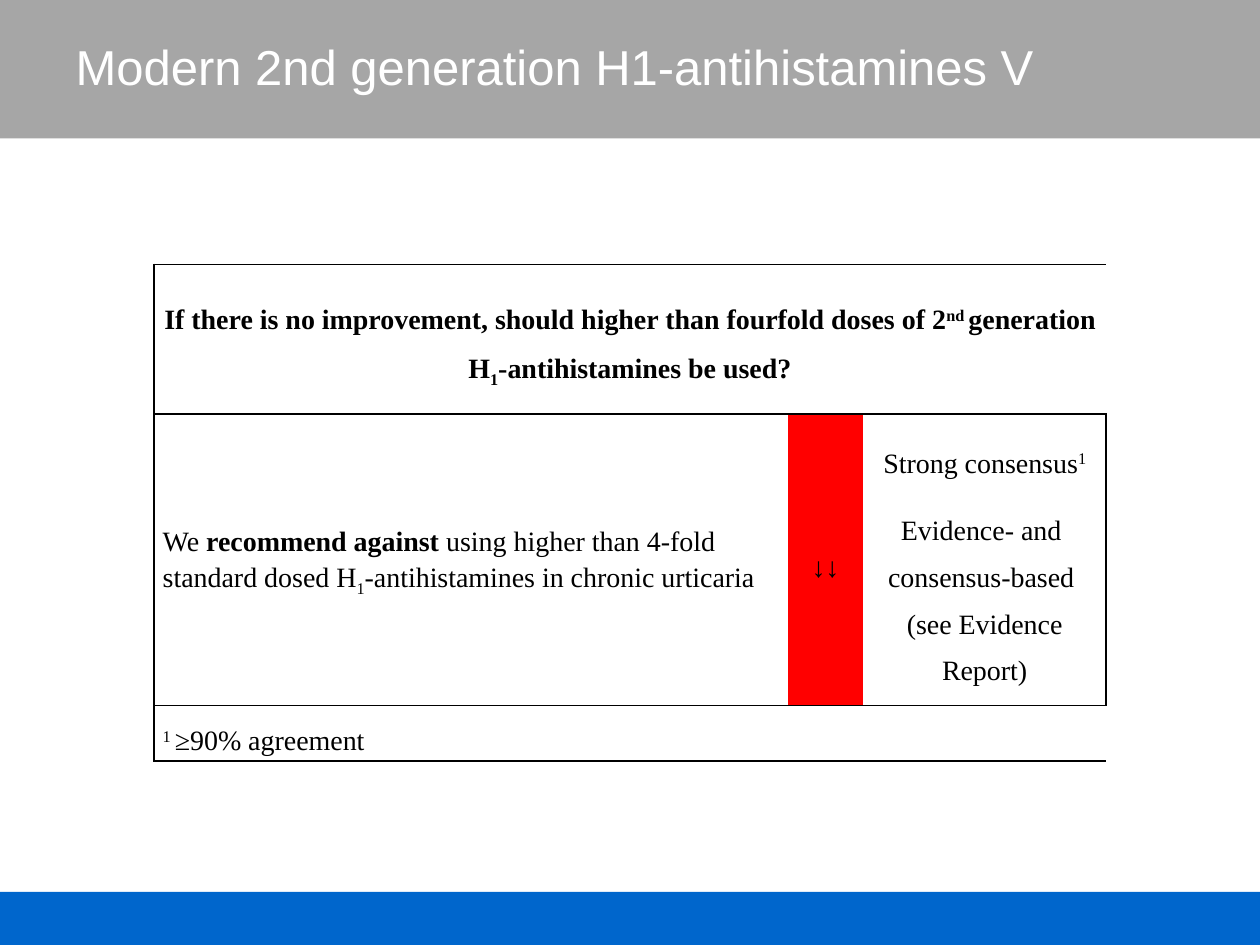
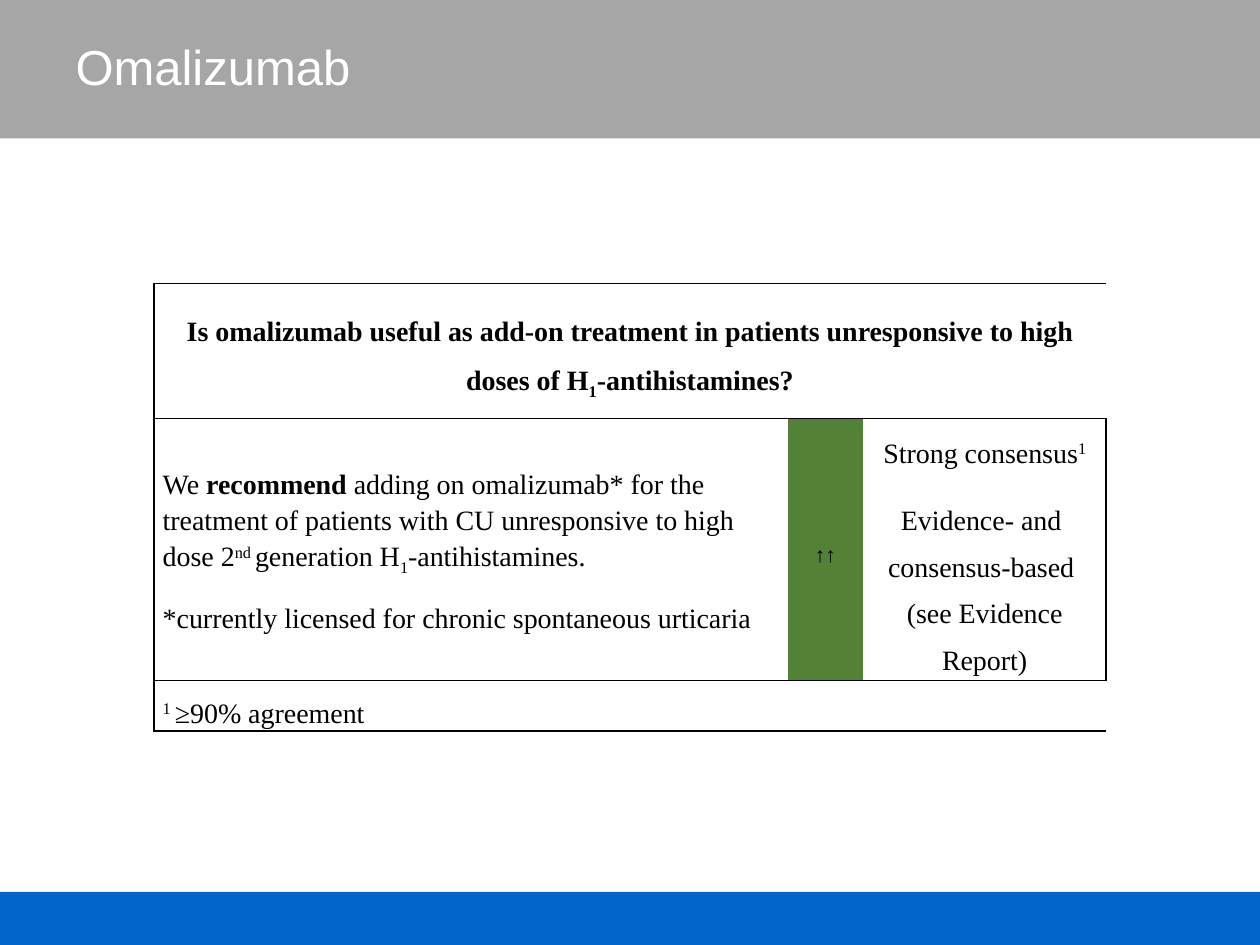
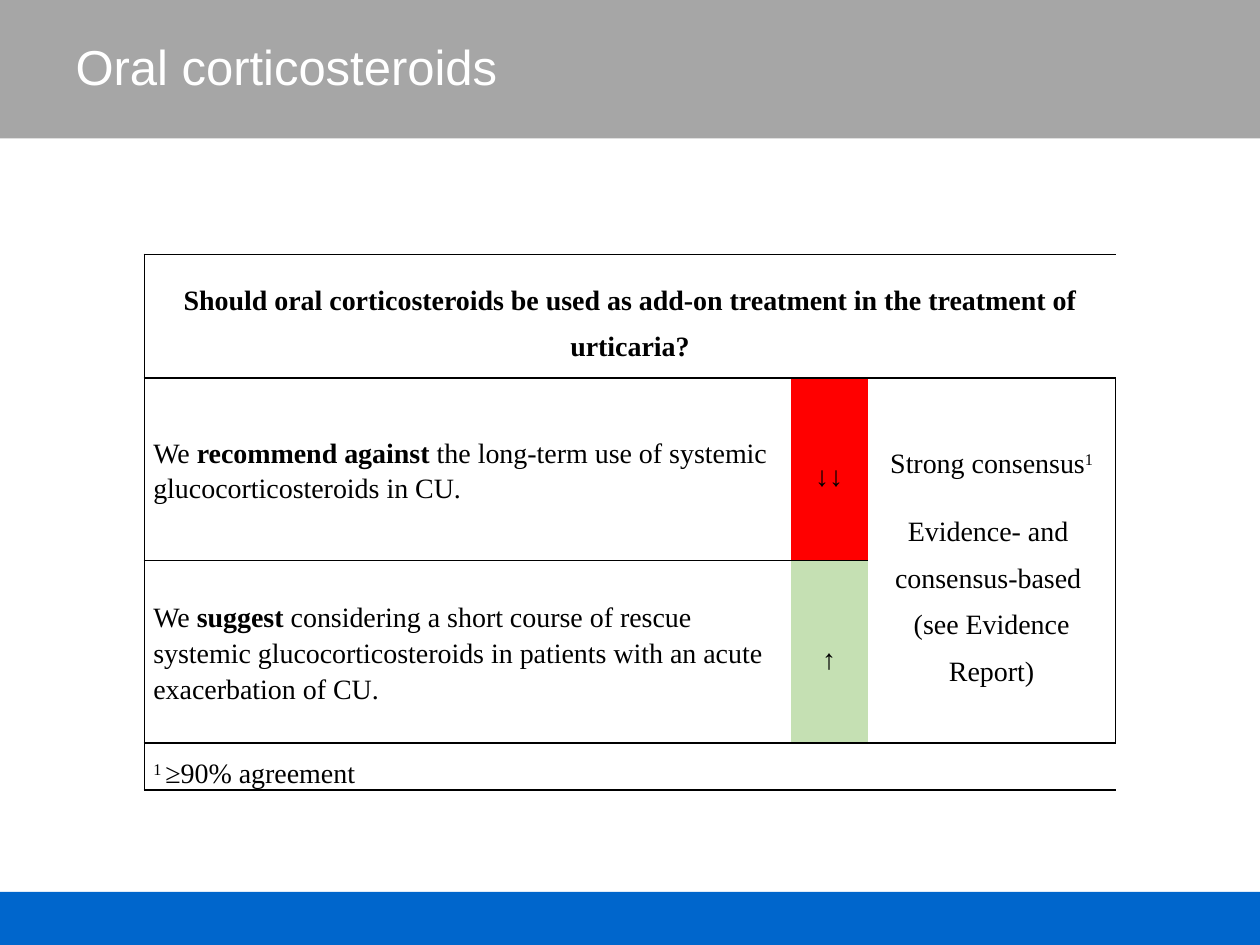
from lxml import etree
from pptx import Presentation
from pptx.dml.color import RGBColor
from pptx.enum import shapes, text
from pptx.oxml import ns
from pptx.util import Cm, Pt

GREY = RGBColor(0xA6, 0xA6, 0xA6)
BLUE = RGBColor(0x00, 0x66, 0xCC)
WHITE = RGBColor(0xFF, 0xFF, 0xFF)
BLACK = RGBColor(0x00, 0x00, 0x00)
RED = RGBColor(0xFF, 0x00, 0x00)
GREEN = RGBColor(0x53, 0x81, 0x35)
PALE = RGBColor(0xC5, 0xE0, 0xB3)

LEFT, MID, JUST = text.PP_ALIGN.LEFT, text.PP_ALIGN.CENTER, text.PP_ALIGN.JUSTIFY
WIDE, HIGH = 25.4, 19.05
BANDS = [(0, 2.79, GREY), (17.98, 1.07, BLUE)]
MARKS = {"!": ("b", "1"), "^": ("baseline", "30000"), "_": ("baseline", "-25000")}
NOTE = "^1 |≥90% agreement"
BASIS = [
    ("Strong consensus|^1", 6, 6),
    ("Evidence- and ", 6, 0),
    ("consensus-based ", 0, 0),
]
SOURCE = "(see Evidence Report)"

SLIDES = [
    {
        "title": "Modern 2nd generation H1-antihistamines V",
        "top": 5.33, "cols": [12.78, 1.52, 4.9], "rows": [3.02, 5.87, 1.12],
        "ask": "If there is no improvement, should higher than fourfold doses of 2"
               "|^nd |generation H|_1|-antihistamines be used?",
        "advice": [
            (["We |!recommend against| using higher than 4-fold standard dosed H"
              "|_1|-antihistamines in chronic urticaria"], "↓↓", 16, RED),
        ],
        "after": 0,
    },
    {
        "title": "Omalizumab",
        "top": 5.72, "cols": [12.78, 1.52, 4.9], "rows": [2.72, 5.28, 1.02],
        "ask": "Is omalizumab useful as add-on treatment in patients unresponsive "
               "to high doses of H|_1|-antihistamines?",
        "advice": [
            (["We |!recommend| adding on omalizumab* for the treatment of patients "
              "with CU unresponsive to high dose 2|^nd |generation H|_1|-antihistamines.",
              "*currently licensed for chronic spontaneous urticaria"], "↑↑", 12, GREEN),
        ],
        "after": 6,
    },
    {
        "title": "Oral corticosteroids",
        "top": 5.13, "cols": [13.03, 1.55, 5.0], "rows": [2.49, 3.68, 3.68, 0.94],
        "ask": "Should oral corticosteroids be used as add-on treatment in the "
               "treatment of urticaria?",
        "advice": [
            (["We |!recommend against |the long-term use of systemic "
              "glucocorticosteroids in CU."], "↓↓", 16, RED),
            (["We |!suggest| considering a short course of rescue systemic "
              "glucocorticosteroids in patients with an acute exacerbation of CU."],
             "↑", 16, PALE),
        ],
        "after": 6,
    },
]


def write(para, line, face="Times New Roman", size=16, ink=BLACK, bold=False):
    for piece in line.split("|"):
        mark = MARKS.get(piece[0])
        run = para.add_run()
        run.text = piece[1:] if mark else piece
        font = run.font
        font.name, font.size, font.bold = face, Pt(size), bold
        font.color.rgb = ink
        if mark:
            run._r.get_or_add_rPr().set(*mark)


def fill(cell, lines, align, pitch, size=16, bold=False):
    frame = cell.text_frame
    for i, (line, before, after) in enumerate(lines):
        para = frame.add_paragraph() if i else frame.paragraphs[0]
        para.alignment, para.line_spacing = align, pitch
        para.space_before, para.space_after = Pt(before), Pt(after)
        write(para, line, size=size, bold=bold)


def edge(cell, sides):
    props = cell._tc.get_or_add_tcPr()
    for side in "LRTB":
        line = etree.SubElement(props, ns.qn("a:ln" + side), w=str(Pt(1)))
        if side in sides:
            paint = etree.SubElement(line, ns.qn("a:solidFill"))
            etree.SubElement(paint, ns.qn("a:srgbClr"), val=str(BLACK))
        else:
            etree.SubElement(line, ns.qn("a:noFill"))


def frame_cells(table, count):
    for r in range(count):
        for c in range(3):
            cell = table.cell(r, c)
            cell.vertical_anchor = text.MSO_ANCHOR.MIDDLE
            cell.margin_left = cell.margin_right = Cm(0.18)
            cell.margin_top = cell.margin_bottom = 0
            inner = cell.is_spanned and 0 < r < count - 1
            sides = "B" if inner else "TB"
            edge(cell, sides + {0: "L", 2: "R"}.get(c, ""))
            cell.fill.background()


def add_advice(slide, data):
    cols, rows = data["cols"], data["rows"]
    last = len(rows) - 1
    table = slide.shapes.add_table(
        len(rows), 3, Cm((WIDE - sum(cols)) / 2), Cm(data["top"]),
        Cm(sum(cols)), Cm(sum(rows))).table
    table.first_row = table.horz_banding = False
    for col, width in zip(table.columns, cols):
        col.width = Cm(width)
    for row, height in zip(table.rows, rows):
        row.height = Cm(height)
    for r in (0, last):
        table.cell(r, 0).merge(table.cell(r, 2))
    if last > 2:
        table.cell(1, 2).merge(table.cell(last - 1, 2))
    frame_cells(table, len(rows))

    fill(table.cell(0, 0), [(data["ask"], 6, 6)], MID, 1.5, bold=True)
    for r, (lines, arrow, size, tint) in enumerate(data["advice"], 1):
        fill(table.cell(r, 0), [(line, 6, 6) for line in lines], LEFT, 1.15)
        sign = table.cell(r, 1)
        fill(sign, [(arrow, 0, 8)], MID, 1.5, size, True)
        sign.fill.solid()
        sign.fill.fore_color.rgb = tint
    fill(table.cell(1, 2), BASIS + [(SOURCE, 0, data["after"])], MID, 1.5)
    fill(table.cell(last, 0), [(NOTE, 3, 3)], JUST, 1.5)


def add_bands(master, slide):
    for top, height, tint in BANDS:
        band = slide.shapes.add_shape(
            shapes.MSO_SHAPE.RECTANGLE, 0, Cm(top), Cm(WIDE), Cm(height))
        band.shadow.inherit = False
        band.fill.solid()
        band.fill.fore_color.rgb = tint
        band.line.fill.background()
        master.shapes.element.insert(2, band.element)


def main():
    prs = Presentation()
    prs.slide_width, prs.slide_height = Cm(WIDE), Cm(HIGH)
    for i, data in enumerate(SLIDES):
        slide = prs.slides.add_slide(prs.slide_layouts[5])
        if i == 0:
            add_bands(prs.slide_master, slide)
        title = slide.shapes.title
        title.left, title.top = Cm(1.27), Cm(0.56)
        title.width, title.height = Cm(22.86), Cm(1.55)
        title.text_frame.vertical_anchor = text.MSO_ANCHOR.MIDDLE
        para = title.text_frame.paragraphs[0]
        para.alignment = LEFT
        write(para, data["title"], "Arial", 28, WHITE)
        add_advice(slide, data)
    prs.save("out.pptx")


if __name__ == "__main__":
    main()
